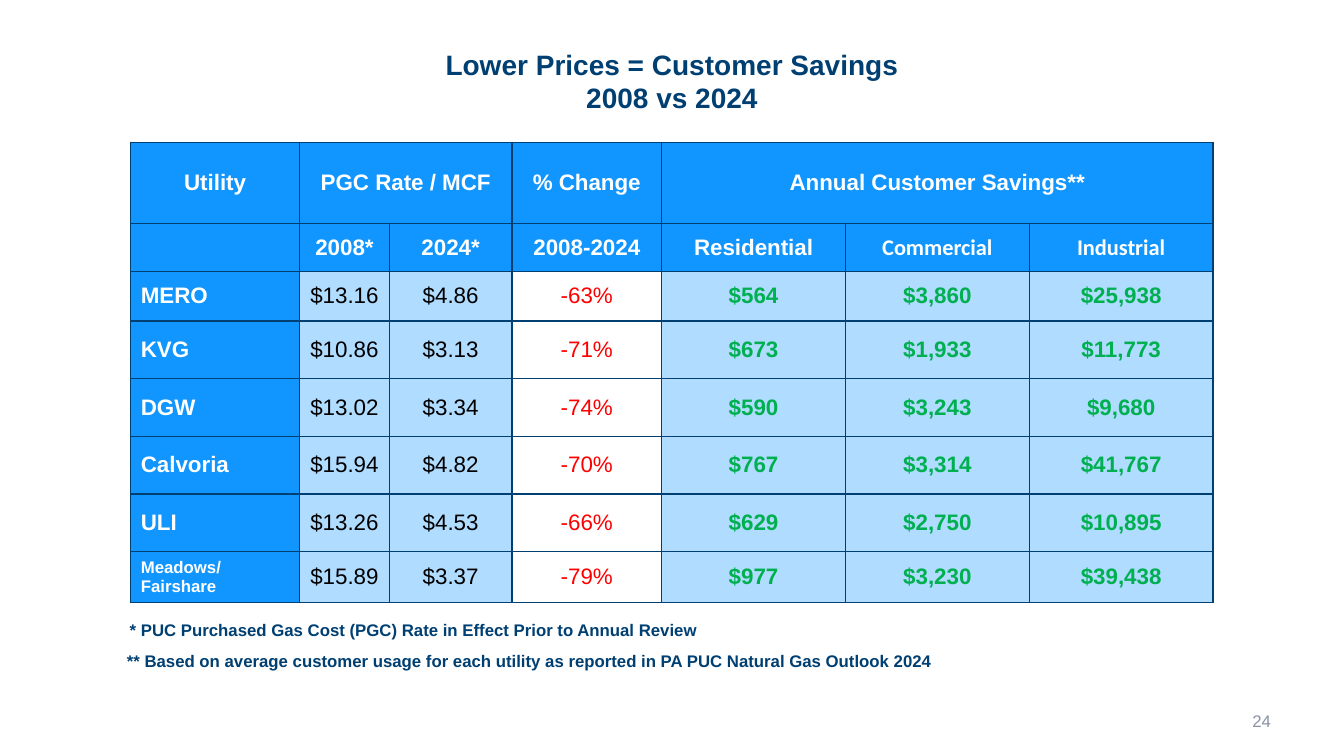
from lxml import etree
from pptx import Presentation
from pptx.dml.color import RGBColor
from pptx.enum.text import MSO_ANCHOR, MSO_AUTO_SIZE, PP_ALIGN
from pptx.oxml.ns import qn
from pptx.util import Pt

LEFT, CENTER, RIGHT = PP_ALIGN.LEFT, PP_ALIGN.CENTER, PP_ALIGN.RIGHT
TOP, MIDDLE = MSO_ANCHOR.TOP, MSO_ANCHOR.MIDDLE
FIT_SHAPE = MSO_AUTO_SIZE.SHAPE_TO_FIT_TEXT

NAVY = RGBColor(0x00, 0x3F, 0x72)
BLUE = RGBColor(0x11, 0x95, 0xFF)
PALE_BLUE = RGBColor(0xB0, 0xDC, 0xFF)
WHITE = RGBColor(0xFF, 0xFF, 0xFF)
BLACK = RGBColor(0x00, 0x00, 0x00)
RED = RGBColor(0xFF, 0x00, 0x00)
GREEN = RGBColor(0x00, 0xB0, 0x50)
GRAY = RGBColor(0x89, 0x92, 0xA5)

COLUMN_WIDTHS = [120.6, 64.1, 87.6, 107] + [131.3] * 3
ROW_HEIGHTS = [58.2, 33.9, 35.7] + [41.2] * 4 + [33.9]
HEADER_ROWS = [
    ["Utility", "PGC Rate / MCF", "", "% Change", "Annual Customer Savings**", "", ""],
    ["", "2008*", "2024*", "2008-2024", "Residential", "Commercial", "Industrial"],
]
UTILITY_ROWS = [
    ["MERO", "$13.16", "$4.86", "-63%", "$564", "$3,860", "$25,938"],
    ["KVG", "$10.86", "$3.13", "-71%", "$673", "$1,933", "$11,773"],
    ["DGW", "$13.02", "$3.34", "-74%", "$590", "$3,243", "$9,680"],
    ["Calvoria", "$15.94", "$4.82", "-70%", "$767", "$3,314", "$41,767"],
    ["ULI", "$13.26", "$4.53", "-66%", "$629", "$2,750", "$10,895"],
    ["Meadows/Fairshare", "$15.89", "$3.37", "-79%", "$977", "$3,230", "$39,438"],
]
# Fill, text colour, bold and alignment of each column below the header
RATE_STYLE = (PALE_BLUE, BLACK, False, CENTER)
SAVINGS_STYLE = (PALE_BLUE, GREEN, True, CENTER)
HEADER_STYLE = (BLUE, WHITE, True, CENTER)
COLUMN_STYLES = [
    (BLUE, WHITE, True, LEFT),
    RATE_STYLE,
    RATE_STYLE,
    (WHITE, RED, False, CENTER),
] + [SAVINGS_STYLE] * 3


def add_run(paragraph, text, size, color, bold, font_name="Arial"):
    run = paragraph.add_run()
    run.text = text
    run.font.name = font_name
    run.font.size = Pt(size)
    run.font.bold = bold
    run.font.color.rgb = color


def add_text(slide, box, lines, size, color=NAVY, bold=True, alignment=LEFT,
             anchor=TOP, wrap=True):
    shape = slide.shapes.add_textbox(*(Pt(length) for length in box))
    frame = shape.text_frame
    frame.word_wrap = wrap
    frame.vertical_anchor = anchor
    if anchor == TOP:
        frame.auto_size = FIT_SHAPE
    for index, line in enumerate(lines):
        paragraph = frame.add_paragraph() if index else frame.paragraphs[0]
        paragraph.alignment = alignment
        add_run(paragraph, line, size, color, bold)


def set_borders(cell):
    properties = cell._tc.get_or_add_tcPr()
    for index, side in enumerate(("a:lnL", "a:lnR", "a:lnT", "a:lnB")):
        line = etree.Element(qn(side), w=str(Pt(1)))
        fill = etree.SubElement(line, qn("a:solidFill"))
        etree.SubElement(fill, qn("a:srgbClr"), val=str(NAVY))
        properties.insert(index, line)


def fill_cell(cell, text, style, size=16, font_name="Arial"):
    fill, color, bold, alignment = style
    cell.fill.solid()
    cell.fill.fore_color.rgb = fill
    cell.vertical_anchor = MIDDLE
    set_borders(cell)
    if text:
        paragraph = cell.text_frame.paragraphs[0]
        paragraph.alignment = alignment
        add_run(paragraph, text, size, color, bold, font_name)


def add_savings_table(slide):
    table = slide.shapes.add_table(
        len(ROW_HEIGHTS), len(COLUMN_WIDTHS), Pt(93.4), Pt(101.6),
        Pt(sum(COLUMN_WIDTHS)), Pt(sum(ROW_HEIGHTS))).table
    for column, width in zip(table.columns, COLUMN_WIDTHS):
        column.width = Pt(width)
    for row, height in zip(table.rows, ROW_HEIGHTS):
        row.height = Pt(height)

    for row_index, labels in enumerate(HEADER_ROWS):
        for column_index, label in enumerate(labels):
            font_name = "Calibri" if label in ("Commercial", "Industrial") else "Arial"
            fill_cell(table.cell(row_index, column_index), label, HEADER_STYLE,
                      font_name=font_name)
    for row_index, values in enumerate(UTILITY_ROWS, len(HEADER_ROWS)):
        for column_index, (value, style) in enumerate(zip(values, COLUMN_STYLES)):
            size = 12 if len(value) > 10 else 16
            fill_cell(table.cell(row_index, column_index), value, style, size)

    for first, last in ((1, 2), (4, 6)):
        table.cell(0, first).merge(table.cell(0, last))


def main():
    presentation = Presentation()
    presentation.slide_width = Pt(960)
    presentation.slide_height = Pt(540)
    slide = presentation.slides.add_slide(presentation.slide_layouts[6])

    add_text(slide, (306.5, 30.2, 347, 55.4),
             ["Lower Prices = Customer Savings", "2008 vs 2024"], 20, alignment=CENTER)
    add_savings_table(slide)
    add_text(slide, (83.5, 439.2, 424, 21.6),
             ["* PUC Purchased Gas Cost (PGC) Rate in Effect Prior to Annual Review"],
             12, alignment=CENTER, wrap=False)
    add_text(slide, (83.5, 461, 610.5, 21.6),
             ["** Based on average customer usage for each utility as reported in "
              "PA PUC Natural Gas Outlook 2024"], 12)
    add_text(slide, (699, 500.5, 216, 28.8), ["24"], 12, GRAY, False, RIGHT, MIDDLE)

    presentation.save("out.pptx")


if __name__ == "__main__":
    main()
